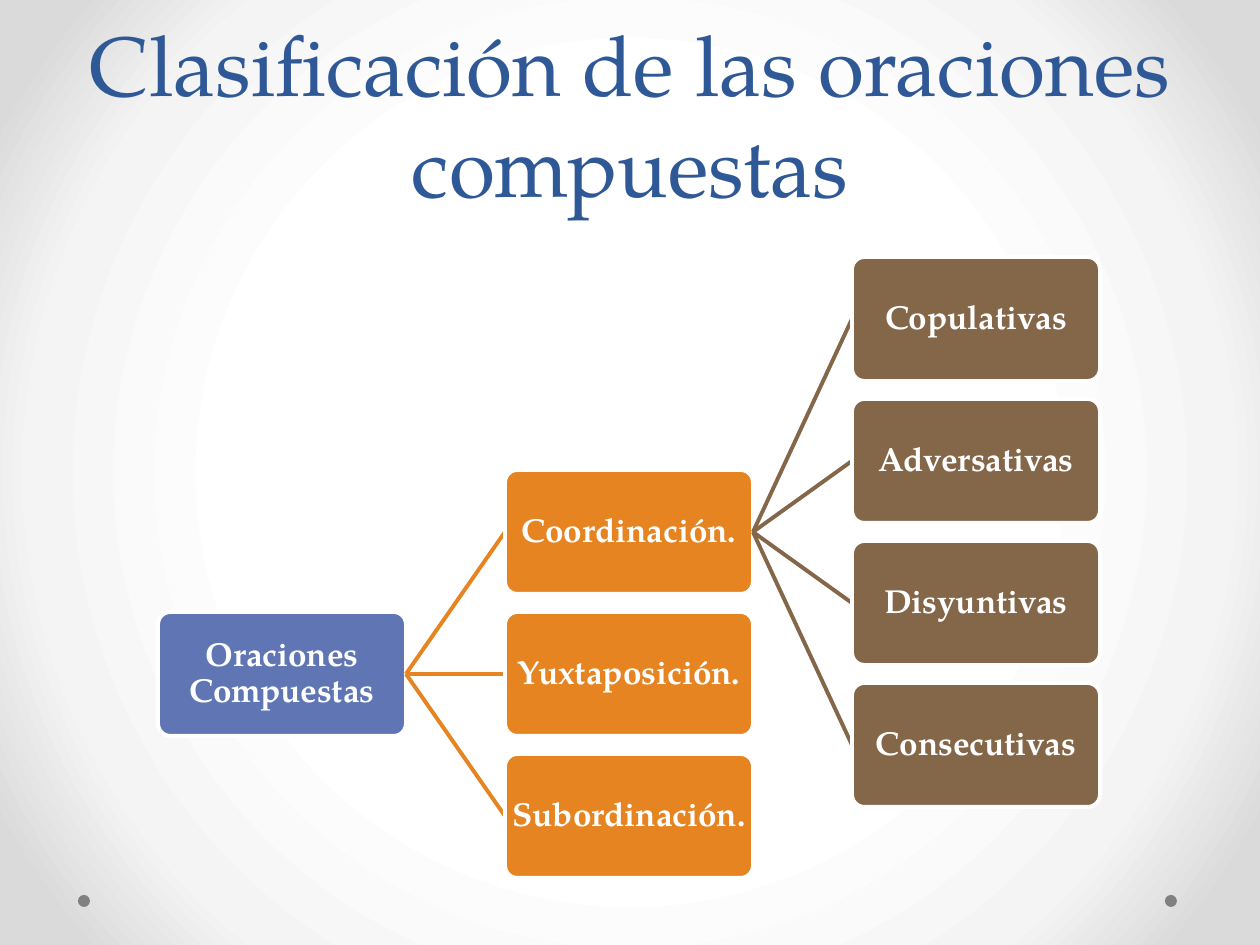
import pptx
import pptx.util
import pptx.dml.color
import pptx.enum.shapes
import pptx.enum.text
import pptx.oxml
import pptx.oxml.ns
from dataclasses import dataclass

TITLE = "Clasificación de las oraciones compuestas"
# label, row (in half steps), children
TREE = ("Oraciones Compuestas", 5, [
    ("Coordinación.", 3, [
        ("Copulativas", 0, []),
        ("Adversativas", 2, []),
        ("Disyuntivas", 4, []),
        ("Consecutivas", 6, []),
    ]),
    ("Yuxtaposición.", 5, []),
    ("Subordinación.", 7, []),
])


@dataclass(frozen=True)
class Theme:
    font: str = "TeX Gyre Pagella"
    title: str = "2F5897"
    levels: tuple = ("6076B4", "E68422", "846648")
    white: str = "FFFFFF"
    dot: str = "808080"
    back: tuple = ((50, "FFFFFF"), (76, "F4F4F4"), (92, "DADADA"))
    big: int = 48
    small: int = 19
    line: float = 2.25


LOOK = Theme()
PX = 914400 // 126
LEFT, TOP = 158, 257
WIDE, HIGH = 248, 124
STEP, HALF = 347, 71
SHAPE = pptx.enum.shapes.MSO_SHAPE
ANCHOR = pptx.enum.text.MSO_ANCHOR


def px(*nums):
    return [pptx.util.Emu(n * PX) for n in nums]


def rgb(code):
    return pptx.dml.color.RGBColor.from_string(code)


def write(shape, text, size, color, bold=False, space=1.0, anchor=ANCHOR.MIDDLE, inset=None):
    frame = shape.text_frame
    frame.word_wrap = True
    frame.auto_size = pptx.enum.text.MSO_AUTO_SIZE.NONE
    frame.vertical_anchor = anchor
    if inset is not None:
        for side in ("left", "top", "right", "bottom"):
            setattr(frame, "margin_" + side, px(inset)[0])
    para = frame.paragraphs[0]
    para.alignment = pptx.enum.text.PP_ALIGN.CENTER
    para.line_spacing = space
    run = para.add_run()
    run.text = text
    font = run.font
    font.name, font.size, font.bold = LOOK.font, pptx.util.Pt(size), bold
    font.color.rgb = rgb(color)


def block(slide, kind, spot, fill, edge=None):
    shape = slide.shapes.add_shape(kind, *px(*spot))
    shape.shadow.inherit = False
    shape.fill.solid()
    shape.fill.fore_color.rgb = rgb(fill)
    if edge:
        shape.line.color.rgb = rgb(edge)
        shape.line.width = pptx.util.Pt(LOOK.line)
    else:
        shape.line.fill.background()
    return shape


def link(slide, color):
    line = slide.shapes.add_connector(pptx.enum.shapes.MSO_CONNECTOR.STRAIGHT, 0, 0, 0, 0)
    line.line.color.rgb = rgb(color)
    line.line.width = pptx.util.Pt(LOOK.line)
    line._element.spPr.append(pptx.oxml.parse_xml(
        "<a:effectLst %s/>" % pptx.oxml.ns.nsdecls("a")))
    return line


def grow(slide, node, level=0, root=None):
    """Draw a node, its link to the parent (behind it) and its children."""
    text, row, kids = node
    color = LOOK.levels[level]
    line = link(slide, color) if root else None
    spot = (LEFT + level * STEP, TOP + row * HALF, WIDE, HIGH)
    box = block(slide, SHAPE.ROUNDED_RECTANGLE, spot, color, LOOK.white)
    box.adjustments[0] = 0.1
    write(box, text, LOOK.small, LOOK.white, bold=True, space=0.9, inset=1)
    if line:
        line.begin_connect(root, 3)
        line.end_connect(box, 1)
    for kid in kids:
        grow(slide, kid, level + 1, box)


def paint(slide):
    """Give the slide a circular gradient background."""
    fill = slide.background.fill
    fill.gradient()
    stops = "".join('<a:gs pos="%d"><a:srgbClr val="%s"/></a:gs>' % (at * 1000, code)
                    for at, code in LOOK.back)
    grad = pptx.oxml.parse_xml(
        '<a:gradFill %s rotWithShape="1"><a:gsLst>%s</a:gsLst><a:path path="circle">'
        '<a:fillToRect l="50000" t="50000" r="50000" b="50000"/></a:path></a:gradFill>'
        % (pptx.oxml.ns.nsdecls("a"), stops))
    old = slide._element.find(".//" + pptx.oxml.ns.qn("a:gradFill"))
    old.getparent().replace(old, grad)


def main():
    deck = pptx.Presentation()
    deck.slide_width, deck.slide_height = px(1260, 945)
    slide = deck.slides.add_slide(deck.slide_layouts[5])
    paint(slide)
    for left in (1165, 78):
        block(slide, SHAPE.OVAL, (left, 895, 12, 12), LOOK.dot)
    head = slide.shapes.title
    head.left, head.top, head.width, head.height = px(63, 37, 1134, 184)
    write(head, TITLE, LOOK.big, LOOK.title, space=pptx.util.Pt(58), anchor=ANCHOR.BOTTOM)
    grow(slide, TREE)
    deck.save("out.pptx")


if __name__ == "__main__":
    main()
